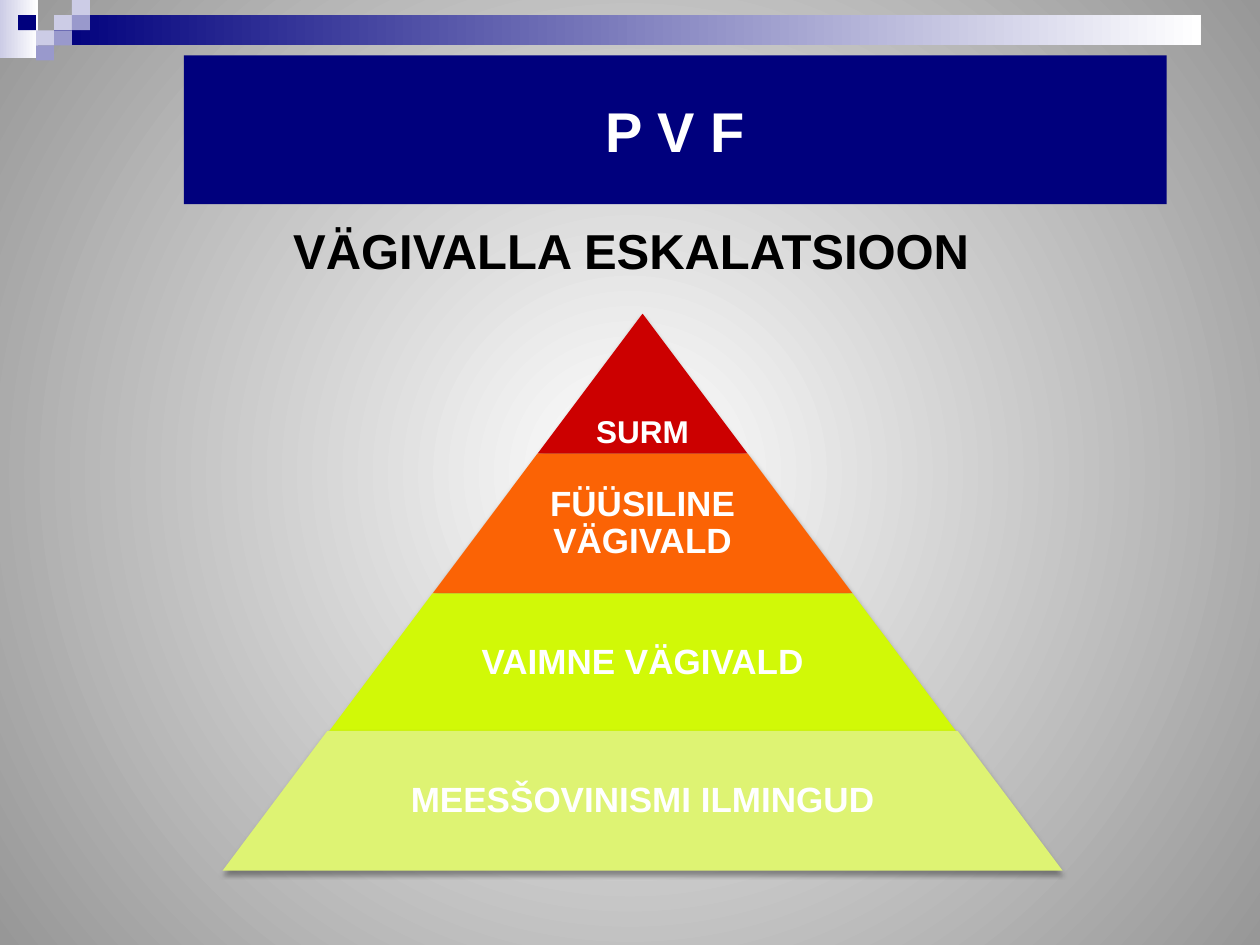
from pptx import Presentation
from pptx import util as u
from pptx.dml.color import RGBColor
from pptx.enum import shapes, text
from pptx.oxml import parse_xml
from pptx.oxml.ns import nsdecls, qn

NAVY, LILAC, MAUVE, WHITE = "00007D", "CCCCE6", "9999CC", "FFFFFF"
RECT = shapes.MSO_SHAPE.RECTANGLE
TRAP = shapes.MSO_SHAPE.TRAPEZOID
MID, LOW, TOP = (text.MSO_ANCHOR.MIDDLE, text.MSO_ANCHOR.BOTTOM,
                 text.MSO_ANCHOR.TOP)


def rgb(code):
    return RGBColor.from_string(code)


def blend(fill, first, last):
    """Give a fill a left-to-right gradient of two colours."""
    fill.gradient()
    fill.gradient_angle = 0
    for stop, code in zip(fill.gradient_stops, (first, last)):
        stop.color.rgb = rgb(code)


def write(shape, words, size, color=WHITE, anchor=MID, inset=None, line=None):
    frame = shape.text_frame
    frame.word_wrap = True
    frame.vertical_anchor = anchor
    if inset is not None:
        frame.margin_left = frame.margin_right = u.Inches(inset)
        frame.margin_top = frame.margin_bottom = u.Inches(inset)
    para = frame.paragraphs[0]
    para.alignment = text.PP_ALIGN.CENTER
    if line:
        para.line_spacing = line
    run = para.add_run()
    run.text = words
    font = run.font
    font.name, font.size, font.bold = "Arial", u.Pt(size), True
    font.color.rgb = rgb(color)


class Deck:
    def __init__(self, wide, high):
        self.show = Presentation()
        self.show.slide_width = u.Inches(wide)
        self.show.slide_height = u.Inches(high)
        self.slide = self.show.slides.add_slide(self.show.slide_layouts[6])

    def glow(self, inner, outer):
        """Fill the background with a gradient that spreads from the centre."""
        blend(self.slide.background.fill, inner, outer)
        grad = self.slide.element.find(".//" + qn("a:gradFill"))
        grad.replace(grad.find(qn("a:lin")), parse_xml(
            f'<a:path {nsdecls("a")} path="circle"><a:fillToRect l="50000" '
            't="50000" r="50000" b="50000"/></a:path>'))

    def shape(self, kind, box, *colors):
        item = self.slide.shapes.add_shape(kind, *map(u.Inches, box))
        item.shadow.inherit = False
        item.line.fill.background()
        if len(colors) == 2:
            blend(item.fill, *colors)
        else:
            item.fill.solid()
            item.fill.fore_color.rgb = rgb(colors[0])
        return item

    def label(self, box, words, size, **style):
        item = self.slide.shapes.add_textbox(*map(u.Inches, box))
        write(item, words, size, **style)

    def tier(self, box, color):
        """Draw a shadowed slice of the pyramid."""
        item = self.shape(TRAP, box, color)
        item.adjustments[0] = 0.75
        effect = item.element.spPr.find(qn("a:effectLst"))
        effect.append(parse_xml(
            f'<a:outerShdw {nsdecls("a")} blurRad="{u.Pt(3.1)}" '
            f'dist="{u.Pt(1.8)}" dir="5400000" rotWithShape="0">'
            '<a:srgbClr val="000000"><a:alpha val="35000"/></a:srgbClr>'
            '</a:outerShdw>'))


def main():
    deck = Deck(10, 7.5)
    deck.glow(WHITE, "979797")

    deck.shape(RECT, (0, 0, 0.3, 0.46), LILAC, WHITE)
    deck.shape(RECT, (0.43, 0.12, 9.1, 0.24), NAVY, WHITE)
    wide, high = 1 / 7, 0.12
    for col, row, color in ((3, 1, LILAC), (4, 0, LILAC), (4, 1, MAUVE),
                            (2, 2, LILAC), (1, 1, NAVY), (3, 2, MAUVE),
                            (2, 3, MAUVE)):
        deck.shape(RECT, (col * wide, row * high, wide, high), color)

    title = deck.shape(RECT, (1.46, 0.44, 7.8, 1.18), NAVY)
    write(title, "P V F", 32)
    deck.label((0.51, 1.7, 9, 0.64), "VÄGIVALLA ESKALATSIOON", 28,
               color="000000", anchor=TOP)

    mid, step, high = 5.1, 5 / 3, 1.11
    tiers = (("SURM", "CC0000", 2.49, 18, 1, LOW),
             ("FÜÜSILINE VÄGIVALD", "FB6305", 3.6, 20, 0.65, MID),
             ("VAIMNE VÄGIVALD", "D1F907", 4.71, 20, 0.65, MID),
             ("MEESŠOVINISMI ILMINGUD", "DEF373", 5.8, 20, 0.65, MID))
    for rank, (words, color, top, size, share, anchor) in enumerate(tiers, 1):
        wide = rank * step
        deck.tier((mid - wide / 2, top, wide, high), color)
        wide *= share
        deck.label((mid - wide / 2, top, wide, high), words, size,
                   anchor=anchor, inset=0.03, line=0.9)

    deck.show.save("out.pptx")


if __name__ == "__main__":
    main()
